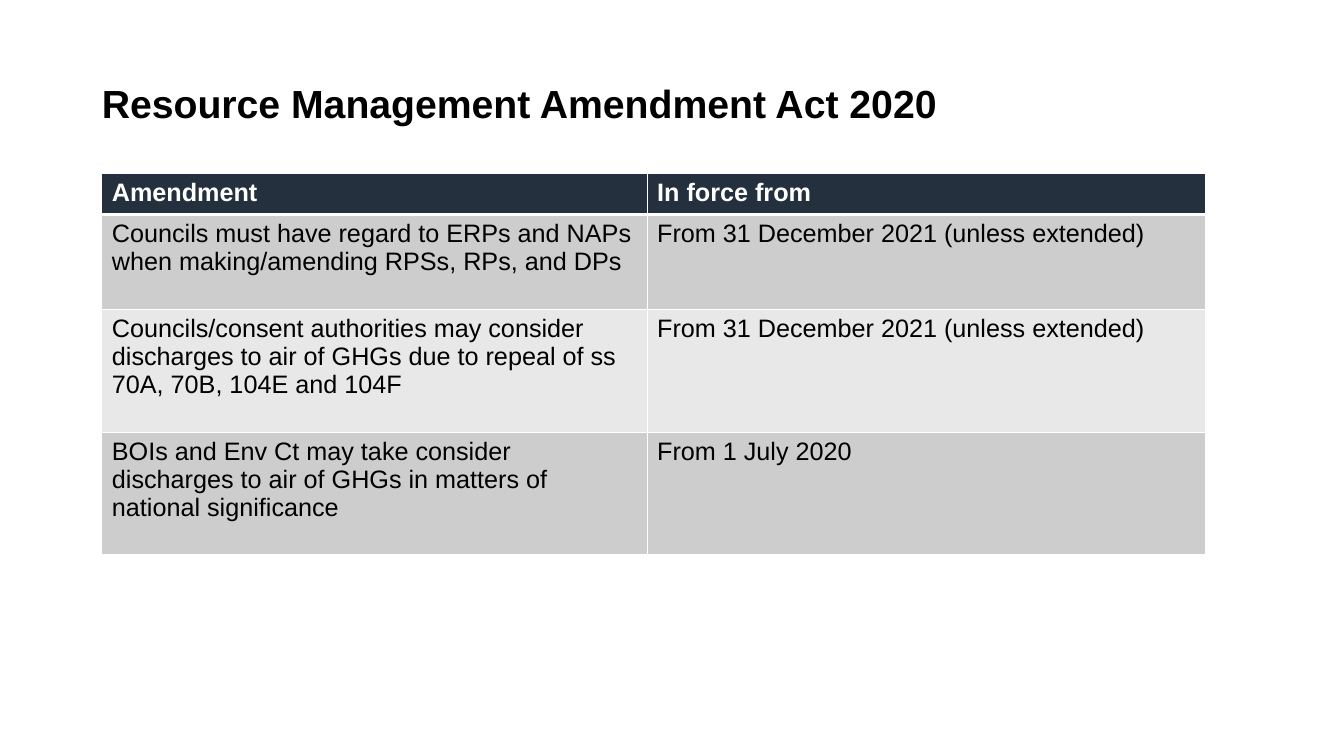
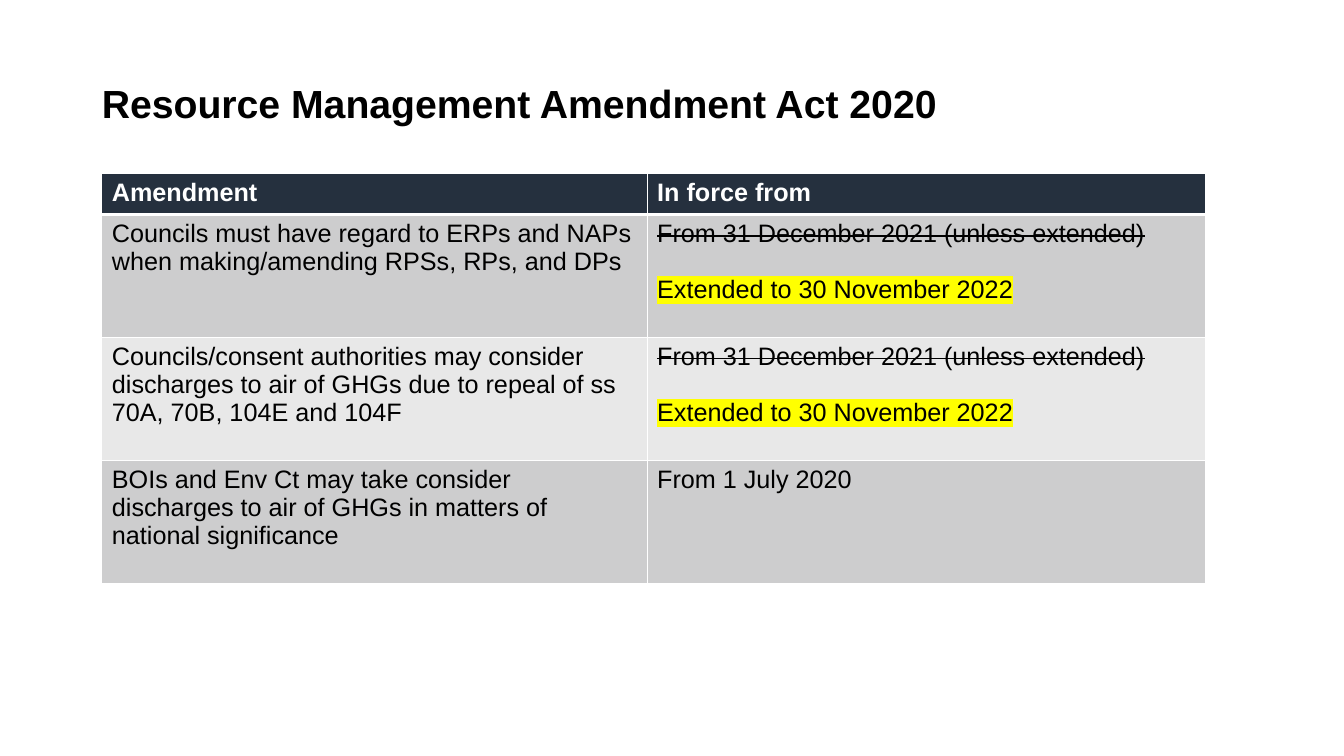
from dataclasses import dataclass

from lxml.etree import SubElement
from pptx import Presentation
from pptx.dml.color import RGBColor
from pptx.oxml.ns import qn
from pptx.slide import Slide
from pptx.table import _Cell
from pptx.text.text import _Paragraph
from pptx.util import Pt

COLOURS = {
    "text": "000000",
    "header_text": "FFFFFF",
    "header": "25303E",
    "band_dark": "CDCDCE",
    "band_light": "E8E8E8",
    "border": "FFFFFF",
    "highlight": "FFFF00",
}
FONT = "Arial"
TITLE = "Resource Management Amendment Act 2020"
HEADINGS = ("Amendment", "In force from")
LEFT = 72.75
COLUMN_WIDTHS = (389.5, 399)
HEADER_HEIGHT = 29.3
LINE_HEIGHT = 20.15
CELL_PADDING = 7.2


@dataclass(frozen=True)
class Amendment:
    text: str
    in_force: str
    lines: int
    extension: str = ""


COUNCILS = "Councils must have regard to ERPs and NAPs when making/amending RPSs, RPs, and DPs"
CONSENTS = (
    "Councils/consent authorities may consider discharges to air of GHGs "
    "due to repeal of ss 70A, 70B, 104E and 104F"
)
ORIGINAL_DATE = "From 31 December 2021 (unless extended)"
EXTENSION = "Extended to 30 November 2022"
NATIONAL = Amendment(
    "BOIs and Env Ct may take consider discharges to air of GHGs "
    "in matters of national significance",
    "From 1 July 2020",
    4,
)
SLIDES = (
    (Amendment(COUNCILS, ORIGINAL_DATE, 3), Amendment(CONSENTS, ORIGINAL_DATE, 4), NATIONAL),
    (
        Amendment(COUNCILS, ORIGINAL_DATE, 4, EXTENSION),
        Amendment(CONSENTS, ORIGINAL_DATE, 4, EXTENSION),
        NATIONAL,
    ),
)


def style(paragraph: _Paragraph, size: float, colour: str, bold: bool) -> None:
    font = paragraph.font
    font.name, font.size, font.bold = FONT, Pt(size), bold
    font.color.rgb = RGBColor.from_string(COLOURS[colour])


def add_border(cell: _Cell, edge: str, width: float) -> None:
    line = SubElement(cell._tc.get_or_add_tcPr(), qn(f"a:{edge}"), w=str(Pt(width)))
    fill = SubElement(line, qn("a:solidFill"))
    SubElement(fill, qn("a:srgbClr"), val=COLOURS["border"])


def fill_cell(cell: _Cell, text: str, row: int) -> None:
    """Write a cell; row 0 is the header, with a thick rule beneath it."""
    is_header = row == 0
    for edge in ("lnL", "lnR", "lnT", "lnB"):
        is_header_rule = (row, edge) in ((0, "lnB"), (1, "lnT"))
        add_border(cell, edge, 3 if is_header_rule else 1)
    band = "header" if is_header else "band_dark" if row % 2 else "band_light"
    cell.fill.solid()
    cell.fill.fore_color.rgb = RGBColor.from_string(COLOURS[band])
    paragraph = cell.text_frame.paragraphs[0]
    paragraph.add_run().text = text
    style(paragraph, 18, "header_text" if is_header else "text", is_header)


def add_extension(cell: _Cell, text: str) -> None:
    """Strike out the date in the cell and add a highlighted one below."""
    old_date = cell.text_frame.paragraphs[0].runs[0]
    old_date._r.get_or_add_rPr().set("strike", "sngStrike")
    paragraph = cell.text_frame.add_paragraph()
    paragraph.space_before = Pt(LINE_HEIGHT)
    new_date = paragraph.add_run()
    new_date.text = text
    highlight = SubElement(new_date._r.get_or_add_rPr(), qn("a:highlight"))
    SubElement(highlight, qn("a:srgbClr"), val=COLOURS["highlight"])
    style(paragraph, 18, "text", False)


def add_title(slide: Slide) -> None:
    frame = slide.shapes.add_textbox(Pt(LEFT), Pt(60.5), Pt(834.5), Pt(42.5)).text_frame
    frame.word_wrap = True
    frame.margin_left = frame.margin_top = frame.margin_right = frame.margin_bottom = 0
    paragraph = frame.paragraphs[0]
    paragraph.add_run().text = TITLE
    paragraph.line_spacing = 0.9
    style(paragraph, 28, "text", True)


def add_amendments(slide: Slide, amendments: tuple[Amendment, ...]) -> None:
    heights = [HEADER_HEIGHT] + [a.lines * LINE_HEIGHT + CELL_PADDING for a in amendments]
    table = slide.shapes.add_table(
        len(heights), len(COLUMN_WIDTHS),
        Pt(LEFT), Pt(124), Pt(sum(COLUMN_WIDTHS)), Pt(sum(heights)),
    ).table
    table.horz_banding = False
    for column, width in zip(table.columns, COLUMN_WIDTHS):
        column.width = Pt(width)
    for row, height in zip(table.rows, heights):
        row.height = Pt(height)

    rows = [HEADINGS] + [(a.text, a.in_force) for a in amendments]
    for row, texts in enumerate(rows):
        for column, text in enumerate(texts):
            fill_cell(table.cell(row, column), text, row)
    for row, amendment in enumerate(amendments, start=1):
        if amendment.extension:
            add_extension(table.cell(row, 1), amendment.extension)


def main() -> None:
    presentation = Presentation()
    presentation.slide_width, presentation.slide_height = Pt(960), Pt(540)
    for amendments in SLIDES:
        slide = presentation.slides.add_slide(presentation.slide_layouts[6])
        add_title(slide)
        add_amendments(slide, amendments)
    presentation.save("out.pptx")


if __name__ == "__main__":
    main()
